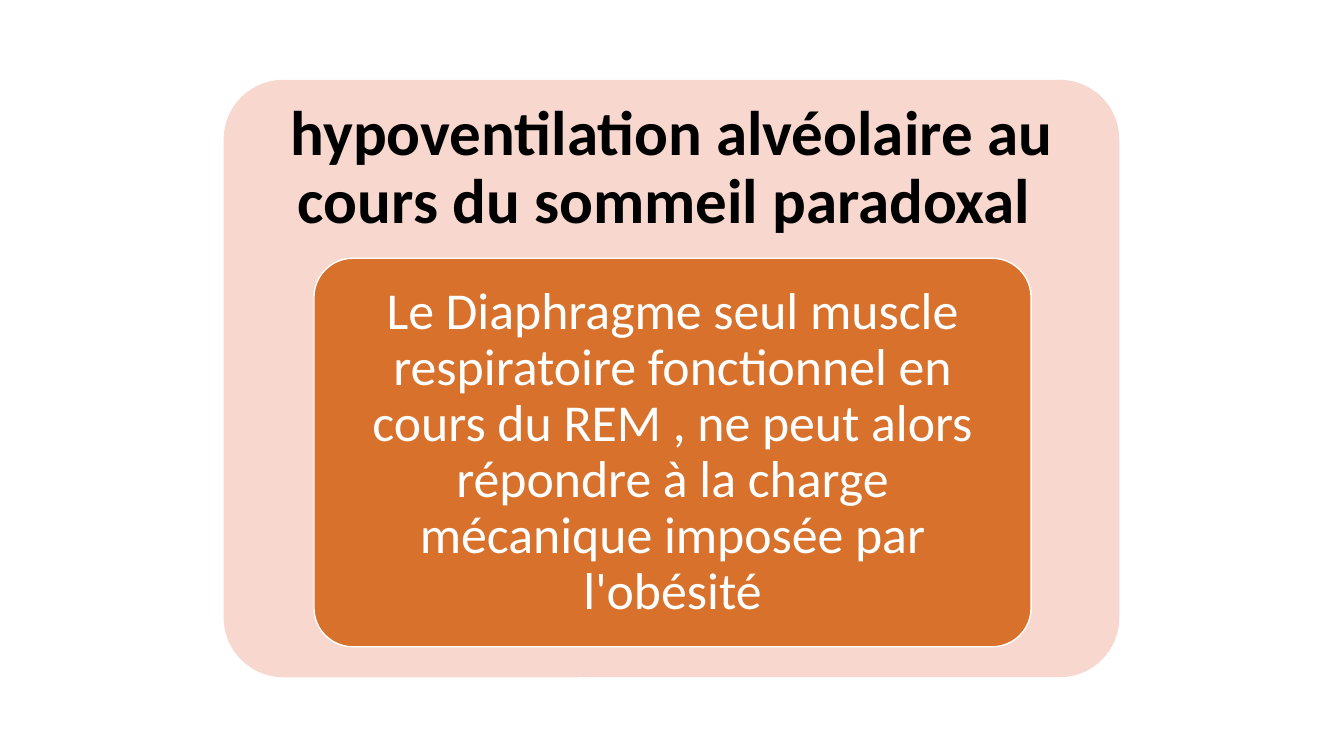
from pptx import Presentation
from pptx import util as u
from pptx.dml.color import RGBColor
from pptx.enum import shapes, text

PX = 9525  # EMU per px, 96 px to the inch


def color(value):
    return RGBColor.from_string(value)


def write(s, words, size, ink, bold, inset_x, inset_y):
    tf = s.text_frame
    tf.word_wrap = True
    tf.vertical_anchor = text.MSO_ANCHOR.MIDDLE
    tf.margin_left = tf.margin_right = inset_x * PX
    tf.margin_top = tf.margin_bottom = inset_y * PX
    p = tf.paragraphs[0]
    p.alignment = text.PP_ALIGN.CENTER
    p.line_spacing = 0.9
    r = p.add_run()
    r.text = words
    r.font.name = "Calibri"
    r.font.size = u.Pt(size)
    r.font.bold = bold
    r.font.color.rgb = color(ink)


prs = Presentation()
prs.slide_width, prs.slide_height = 1280 * PX, 720 * PX
slide = prs.slides.add_slide(prs.slide_layouts[6])

# Outer panel and inner card
cards = []
for x, y, w, h, fill in [(213, 76, 853, 569, "F8D7CE"),
                         (299, 246, 683, 370, "D7712C")]:
    sp = slide.shapes.add_shape(shapes.MSO_SHAPE.ROUNDED_RECTANGLE,
                                x * PX, y * PX, w * PX, h * PX)
    sp.adjustments[0] = 0.1
    sp.shadow.inherit = False
    sp.fill.solid()
    sp.fill.fore_color.rgb = color(fill)
    cards.append(sp)
panel, card = cards
panel.line.fill.background()
card.line.color.rgb = color("FFFFFF")
card.line.width = u.Pt(1)

# Title across the top of the panel
title = slide.shapes.add_textbox(213 * PX, 76 * PX, 853 * PX, 171 * PX)
write(title, "hypoventilation alvéolaire au cours du sommeil paradoxal ",
      45, "000000", True, 18, 18)

# Explanation inside the card
write(card, "Le Diaphragme seul muscle respiratoire fonctionnel en cours du REM , "
      "ne peut alors répondre à la charge mécanique imposée par l'obésité",
      37, "FFFFFF", False, 10, 8)

prs.save("out.pptx")
